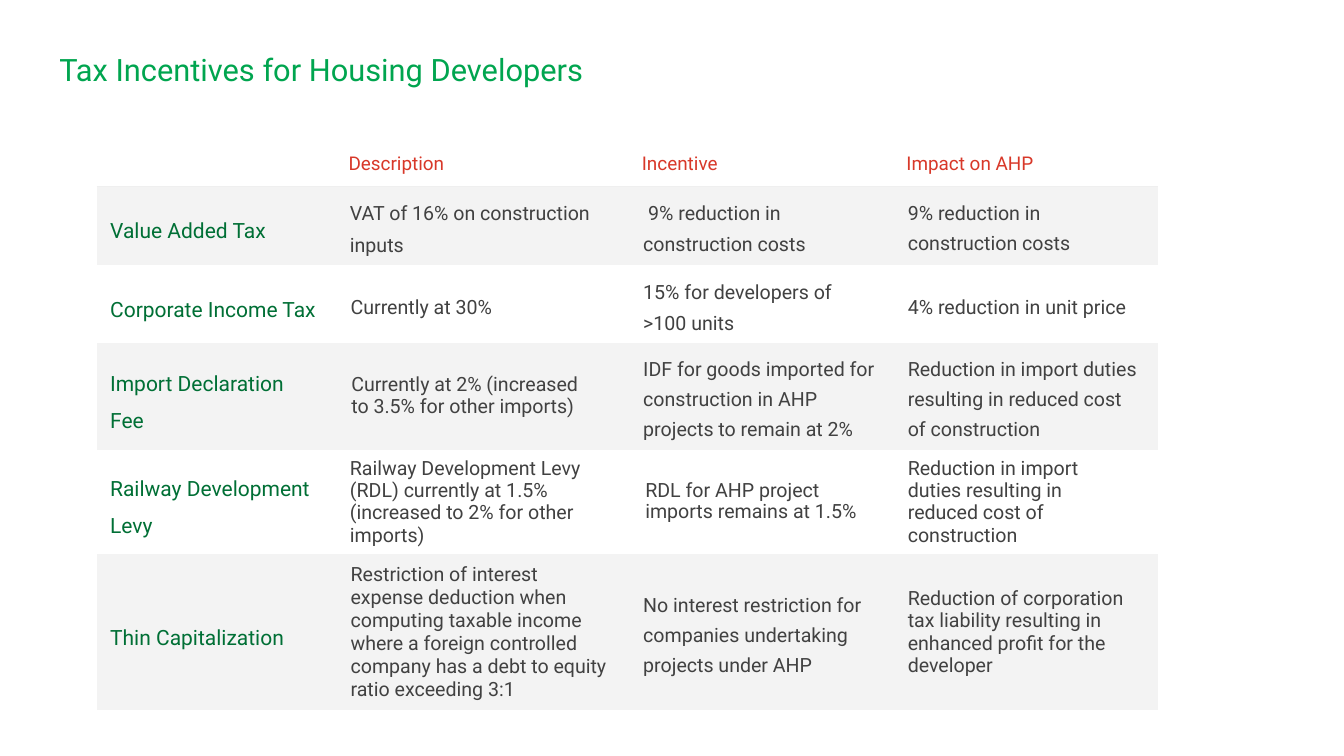
"""Build the slide on tax incentives for housing developers."""
from lxml.etree import SubElement
from pptx import Presentation
from pptx.dml.color import RGBColor
from pptx.enum.text import MSO_ANCHOR
from pptx.oxml.ns import qn
from pptx.util import Pt

HUES = {"title": "00A54F", "head": "D83829", "tax": "006F35", "body": "414141",
        "band": "F3F3F3", "plain": "FFFFFF", "rule": "EFEFEF"}
PLAIN = "{2D5ABB26-0587-4C30-8999-92F81FD0307C}"
WIDTHS = [340.5, 419, 378, 378]
HEIGHTS = [57, 113, 104, 142, 117, 189]
HEADS = ["", "Description", "Incentive", "Impact on AHP"]
ROWS = [
    [("Value Added Tax", 1.5, 0),
     ("VAT of 16% on construction inputs", 1.37, 2),
     ("9% reduction in construction costs", 1.32, 2),
     ("9% reduction in construction costs", 1.31, 2)],
    [("Corporate Income Tax", 1.5, 0),
     ("Currently at 30%", 1.31, 3),
     ("15% for developers of >100 units", 1.37, 2),
     ("4% reduction in unit price", 1.37, 2)],
    [("Import Declaration Fee", 1.5, 0),
     ("Currently at 2% (increased\vto 3.5% for other imports)", 0.96, 4),
     ("IDF for goods imported for construction in AHP projects to remain at 2%", 1.32, 2),
     ("Reduction in import duties resulting in reduced cost of construction", 1.31, 2)],
    [("Railway Development Levy", 1.5, 0),
     ("Railway Development Levy (RDL) currently at 1.5% (increased to 2% for other imports)",
      0.97, 2),
     ("RDL for AHP project imports remains at 1.5%", 0.89, 5),
     ("Reduction in import\vduties resulting in\vreduced cost of construction", 0.97, 2)],
    [("Thin Capitalization", 1.5, 0),
     ("Restriction of interest\vexpense deduction when computing taxable income where a foreign "
      "controlled company has a debt to equity ratio exceeding 3:1", 1.01, 3),
     ("No interest restriction for companies undertaking projects under AHP", 1.31, 2),
     ("Reduction of corporation tax liability resulting in enhanced profit for the developer",
      0.97, 2)],
]


def style(para, size, hue):
    para.font.name = "Roboto"
    para.font.size = Pt(size)
    para.font.color.rgb = RGBColor.from_string(HUES[hue])


def paint(cell, hue):
    cell.fill.solid()
    cell.fill.fore_color.rgb = RGBColor.from_string(HUES[hue])
    cell.margin_left = cell.margin_right = Pt(19.2)
    cell.margin_top = cell.margin_bottom = Pt(9.6)


deck = Presentation()
deck.slide_width, deck.slide_height = Pt(1920), Pt(1080)
slide = deck.slides.add_slide(deck.slide_layouts[6])

title = slide.shapes.add_textbox(Pt(65.5), Pt(45.5), Pt(1789), Pt(120)).text_frame
title.word_wrap = True
title.margin_left = title.margin_right = title.margin_top = title.margin_bottom = Pt(19.2)
para = title.paragraphs[0]
para.text = "Tax Incentives for Housing Developers"
para.line_spacing = 1.15
style(para, 44, "title")

frame = slide.shapes.add_table(len(HEIGHTS), len(WIDTHS), Pt(138.2), Pt(208.8),
                               Pt(sum(WIDTHS)), Pt(sum(HEIGHTS)))
table = frame.table
table.first_row = table.horz_banding = False
for mark in frame.element.iter(qn("a:tableStyleId")):
    mark.text = PLAIN
for col, width in zip(table.columns, WIDTHS):
    col.width = Pt(width)
for row, height in zip(table.rows, HEIGHTS):
    row.height = Pt(height)

for c, text in enumerate(HEADS):
    cell = table.cell(0, c)
    line = SubElement(cell._tc.get_or_add_tcPr(), qn("a:lnB"), w=str(Pt(0.75)))
    SubElement(SubElement(line, qn("a:solidFill")), qn("a:srgbClr"), val=HUES["rule"])
    paint(cell, "plain")
    if text:
        cell.text = text
        style(cell.text_frame.paragraphs[0], 27, "head")

for r, row in enumerate(ROWS, 1):
    for c, (text, lead, inset) in enumerate(row):
        cell = table.cell(r, c)
        paint(cell, "band" if r % 2 else "plain")
        cell.vertical_anchor = MSO_ANCHOR.MIDDLE
        para = cell.text_frame.paragraphs[0]
        para.text = text
        para.line_spacing = lead
        para.space_after = Pt(10)
        props = para._p.get_or_add_pPr()
        props.set("marL", str(Pt(inset)))
        props.set("indent", str(Pt(7 if (r, c) == (1, 2) else 0)))
        style(para, 28 if c else 30, "body" if c else "tax")

deck.save("out.pptx")
